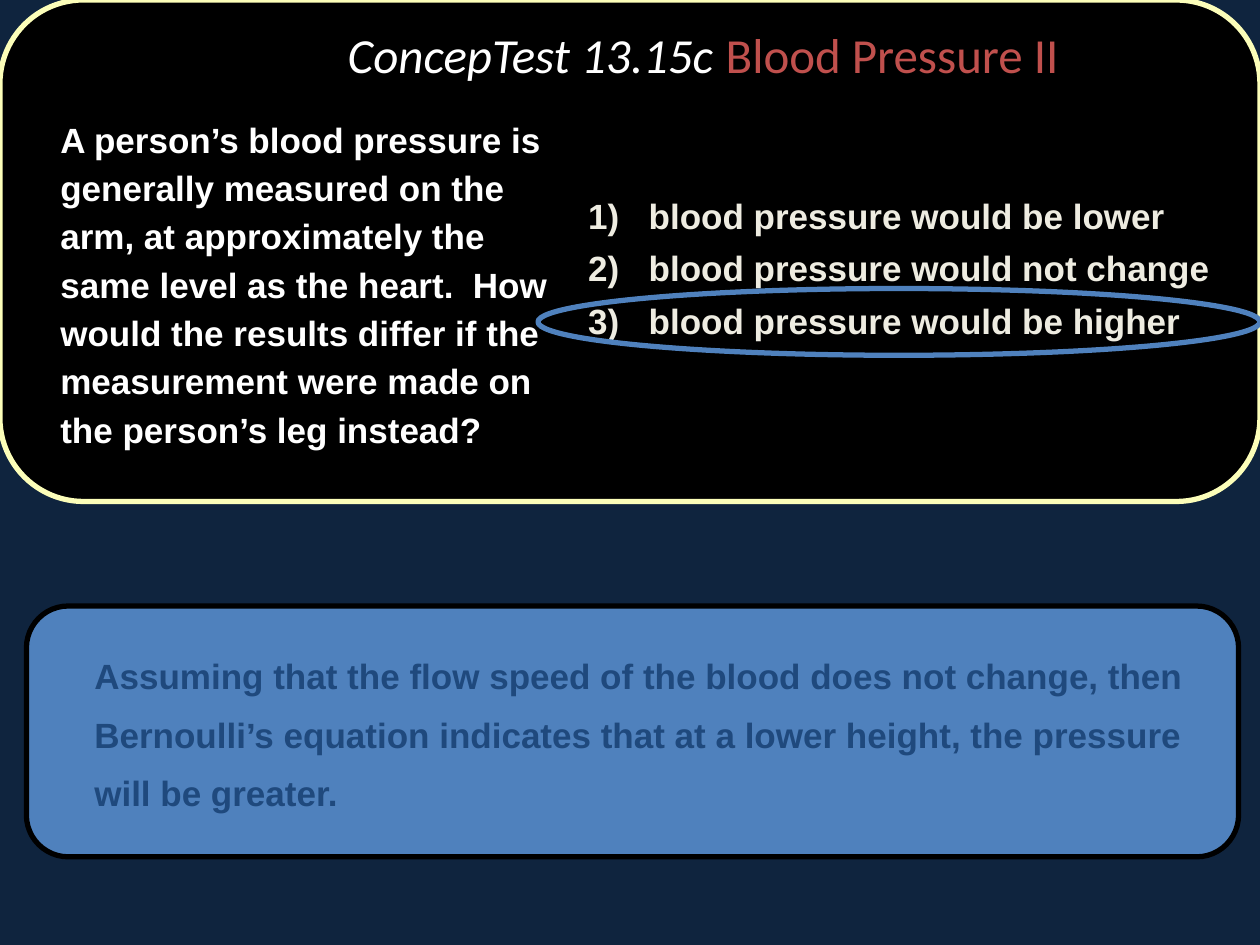
from dataclasses import dataclass
from typing import Optional

import pptx
import pptx.dml.color
import pptx.enum.shapes
import pptx.enum.text
import pptx.util

Inches = pptx.util.Inches
Pt = pptx.util.Pt
RGBColor = pptx.dml.color.RGBColor
MSO_SHAPE = pptx.enum.shapes.MSO_SHAPE
PP_ALIGN = pptx.enum.text.PP_ALIGN
MSO_ANCHOR = pptx.enum.text.MSO_ANCHOR

NAVY = RGBColor(0x0F, 0x24, 0x3E)
BLUE = RGBColor(0x4F, 0x81, 0xBD)
DARK_BLUE = RGBColor(0x1F, 0x49, 0x7D)
BLACK = RGBColor(0x00, 0x00, 0x00)
WHITE = RGBColor(0xFF, 0xFF, 0xFF)
CREAM = RGBColor(0xEE, 0xEC, 0xE1)
YELLOW = RGBColor(0xFC, 0xFE, 0xB9)
RED = RGBColor(0xC0, 0x50, 0x4D)


@dataclass(frozen=True)
class Box:
    left: float
    top: float
    width: float
    height: float

    def emu(self) -> tuple:
        return tuple(Inches(v) for v in (self.left, self.top, self.width, self.height))


@dataclass(frozen=True)
class Outline:
    kind: MSO_SHAPE
    box: Box
    line: RGBColor
    fill: Optional[RGBColor] = None


@dataclass(frozen=True)
class Run:
    text: str
    color: RGBColor
    italic: bool = False


PANELS = (
    Outline(MSO_SHAPE.ROUNDED_RECTANGLE, Box(0.21, 4.81, 9.62, 1.99), BLACK, BLUE),
    Outline(MSO_SHAPE.ROUNDED_RECTANGLE, Box(0, 0, 10, 3.98), YELLOW, BLACK),
)
ANSWER_RING = Outline(MSO_SHAPE.OVAL, Box(4.27, 2.29, 5.73, 0.53), BLUE)

QUESTION = (
    "A person’s blood pressure is generally measured on the arm, at approximately "
    "the same level as the heart.  How would the results differ if the measurement "
    "were made on the person’s leg instead?"
)
ANSWERS = (
    "blood pressure would be lower",
    "blood pressure would not change",
    "blood pressure would be higher",
)
EXPLANATION = (
    "Assuming that the flow speed of the blood does not change, then Bernoulli’s "
    "equation indicates that at a lower height, the pressure will be greater."
)


def add_outline(s, outline: Outline) -> None:
    sp = s.shapes.add_shape(outline.kind, *outline.box.emu())
    sp.shadow.inherit = False
    if outline.fill is None:
        sp.fill.background()
    else:
        sp.fill.solid()
        sp.fill.fore_color.rgb = outline.fill
    sp.line.color.rgb = outline.line
    sp.line.width = Pt(3)


def add_text(s, box: Box, paragraphs: list[list[Run]], *, font: str = "Arial",
             size: float = 20, bold: bool = True, spacing: float = 1.0,
             before: float = 7, margin: float = 0.44, hanging: float = 0,
             align: PP_ALIGN = PP_ALIGN.LEFT,
             anchor: MSO_ANCHOR = MSO_ANCHOR.TOP) -> None:
    tf = s.shapes.add_textbox(*box.emu()).text_frame
    tf.word_wrap = True
    tf.vertical_anchor = anchor
    for i, runs in enumerate(paragraphs):
        p = tf.add_paragraph() if i else tf.paragraphs[0]
        p.alignment = align
        p.line_spacing = spacing
        p.space_before = Pt(before)
        pPr = p._p.get_or_add_pPr()
        pPr.set("marL", str(Inches(margin)))
        pPr.set("indent", str(-Inches(hanging)))
        for run in runs:
            r = p.add_run()
            r.text = run.text
            r.font.name = font
            r.font.size = Pt(size)
            r.font.bold = bold
            r.font.italic = run.italic
            r.font.color.rgb = run.color


def main() -> None:
    prs = pptx.Presentation()
    prs.slide_width, prs.slide_height = Inches(10), Inches(7.5)
    s = prs.slides.add_slide(prs.slide_layouts[6])
    s.background.fill.solid()
    s.background.fill.fore_color.rgb = NAVY

    for panel in PANELS:
        add_outline(s, panel)
    add_text(s, Box(-0.06, 0.84, 4.55, 3.06), [[Run(QUESTION, WHITE)]], spacing=1.15)
    add_text(s, Box(4.13, 1.52, 5.87, 1.41),
             [[Run(f"{n})\t{answer}", CREAM)] for n, answer in enumerate(ANSWERS, 1)],
             spacing=0.95, margin=0.92, hanging=0.48)
    add_text(s, Box(0.21, 5.01, 9.41, 1.38), [[Run(EXPLANATION, DARK_BLUE)]], spacing=1.4)
    add_outline(s, ANSWER_RING)
    add_text(s, Box(1.59, 0, 7.98, 0.92),
             [[Run("ConcepTest 13.15c\t", WHITE, italic=True),
               Run("Blood Pressure II", RED)]],
             font="Calibri", size=28, bold=False, spacing=0.9, before=0, margin=0,
             align=PP_ALIGN.CENTER, anchor=MSO_ANCHOR.MIDDLE)
    prs.save("out.pptx")


if __name__ == "__main__":
    main()
